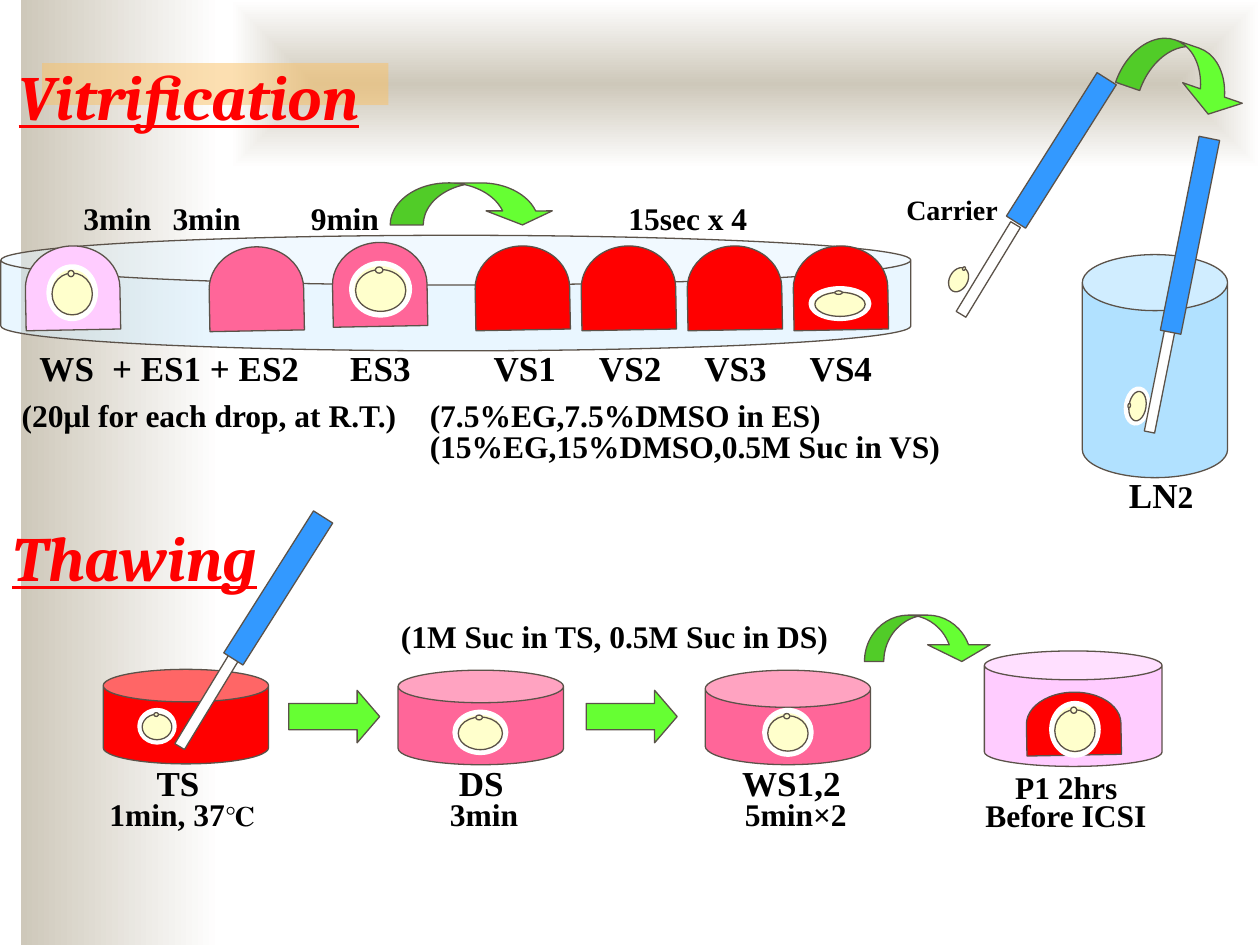
import math

from lxml import etree
from pptx import Presentation
from pptx.dml.color import RGBColor
from pptx.enum import shapes, text
from pptx.oxml import ns
from pptx.util import Pt

WHITE = RGBColor(0xFF, 0xFF, 0xFF)
BLACK = RGBColor(0, 0, 0)
RED = RGBColor(0xFF, 0, 0)
PINK = RGBColor(0xFF, 0x66, 0x99)
LILAC = RGBColor(0xFF, 0xCC, 0xFF)
CREAM = RGBColor(0xFF, 0xFF, 0xCC)
GREEN = RGBColor(0x66, 0xFF, 0x33)
BLUE = RGBColor(0x33, 0x99, 0xFF)
LIQUID = RGBColor(0xB1, 0xE1, 0xFF)
DISH = RGBColor(0xD5, 0xEF, 0xFF)
STONE = RGBColor(0xCE, 0xC8, 0xBA)
ORANGE = RGBColor(0xFA, 0xC1, 0x64)
OUTLINE = RGBColor(0x5B, 0x52, 0x49)

KIND = shapes.MSO_SHAPE
LEFT, CENTER = text.PP_ALIGN.LEFT, text.PP_ALIGN.CENTER
DROP_TILT = 268.9
VS_LEFT, VS_STEP = 274.5, 60.6


def add_figure(slide, kind, box, fill=None, line=OUTLINE, width=0.75, rotation=0, adjustments=()):
    shape = slide.shapes.add_shape(kind, *map(Pt, box))
    shape.shadow.inherit = False
    shape.rotation = rotation
    for index, value in enumerate(adjustments):
        shape.adjustments[index] = value
    if fill is not None:
        shape.fill.solid()
        shape.fill.fore_color.rgb = fill
    if line is None:
        shape.line.fill.background()
    else:
        shape.line.color.rgb = line
        shape.line.width = Pt(width)
    return shape


def make_half_transparent(shape):
    color = shape.element.spPr.find(ns.qn("a:solidFill"))[0]
    etree.SubElement(color, ns.qn("a:alpha"), val="50000")


def add_gradient_panel(slide, box, from_center=False):
    shape = add_figure(slide, KIND.RECTANGLE, box, line=None)
    shape.fill.gradient()
    shape.fill.gradient_angle = 0
    for stop, color in zip(shape.fill.gradient_stops, (STONE, WHITE)):
        stop.color.rgb = color
    if from_center:
        gradient = shape.element.spPr.find(ns.qn("a:gradFill"))
        linear = gradient.find(ns.qn("a:lin"))
        radial = etree.Element(ns.qn("a:path"), {"path": "shape"})
        etree.SubElement(radial, ns.qn("a:fillToRect"),
                         {side: "50000" for side in "ltrb"})
        gradient.replace(linear, radial)


def add_drop(slide, left, top, fill, width=48):
    add_figure(slide, KIND.FLOWCHART_DELAY, (left, top, width, 54), fill, rotation=DROP_TILT)


def add_egg(slide, left, top, width, height, rotation=0):
    """Draw halo, cell and polar body, all turned about the halo's centre."""
    angle = math.radians(rotation)
    # centre offset and size, as fractions of the halo
    parts = [(0, 0, 1, 1, WHITE, 3),
             (0, 0.025, 0.87, 0.81, OUTLINE, 0.75),
             (-0.025, -0.37, 0.13, 0.12, OUTLINE, 0.75)]
    for x, y, part_width, part_height, line, line_width in parts:
        x, y = x * width, y * height
        center_x = left + width / 2 + x * math.cos(angle) - y * math.sin(angle)
        center_y = top + height / 2 + x * math.sin(angle) + y * math.cos(angle)
        w, h = part_width * width, part_height * height
        add_figure(slide, KIND.OVAL, (center_x - w / 2, center_y - h / 2, w, h),
                   CREAM, line, line_width, rotation)


def add_can(slide, box, fill, rim):
    return add_figure(slide, KIND.CAN, box, fill, adjustments=[rim])


def add_carrier(slide, blade, handle, blade_tilt, handle_tilt):
    add_figure(slide, KIND.RECTANGLE, blade, WHITE, rotation=blade_tilt)
    add_figure(slide, KIND.RECTANGLE, handle, BLUE, rotation=handle_tilt)


def add_curved_arrow(slide, box, adjustments, rotation=0):
    add_figure(slide, KIND.CURVED_DOWN_ARROW, box, GREEN,
               rotation=rotation, adjustments=adjustments)


def format_run(run, size, font="Times New Roman", color=BLACK):
    run.font.name = font
    run.font.size = Pt(size)
    run.font.bold = True
    run.font.color.rgb = color


def add_label(slide, words, left, top, width, size=18, align=LEFT, suffix="", suffix_size=16):
    box = slide.shapes.add_textbox(Pt(left), Pt(top), Pt(width), Pt(size * 1.2 + 7.2))
    box.text_frame.word_wrap = True
    paragraph = box.text_frame.paragraphs[0]
    paragraph.text = words
    paragraph.alignment = align
    format_run(paragraph.runs[0], size)
    if suffix:
        run = paragraph.add_run()
        run.text = suffix
        format_run(run, suffix_size)
    return box


def format_heading(shape, words):
    frame = shape.text_frame
    frame.text = words
    frame.word_wrap = True
    frame.auto_size = text.MSO_AUTO_SIZE.NONE
    frame.vertical_anchor = text.MSO_ANCHOR.TOP
    paragraph = frame.paragraphs[0]
    paragraph.alignment = LEFT
    run = paragraph.runs[0]
    format_run(run, 36, "Cambria", RED)
    run.font.italic = True
    run.font.underline = True


def add_background(slide):
    add_gradient_panel(slide, (12, 0, 114, 540))
    add_gradient_panel(slide, (132, 0, 588, 96), from_center=True)
    make_half_transparent(add_figure(slide, KIND.RECTANGLE, (24, 36, 198, 24), ORANGE, None))


def add_title(slide):
    title = slide.shapes.title
    title.left, title.top, title.width, title.height = map(Pt, (3.5, 29, 244, 51))
    format_heading(title, "Vitrification")
    slide.shapes.element.append(title.element)  # in front of the background


def add_vitrification(slide):
    make_half_transparent(add_can(slide, (0.5, 134.5, 520, 66), DISH, 0.43))
    add_drop(slide, 17.5, 137.5, LILAC)
    add_drop(slide, 122.5, 138, PINK)
    add_drop(slide, 193, 135.5, PINK)
    for index in range(4):
        add_drop(slide, VS_LEFT + index * VS_STEP, 137.5, RED)
        add_label(slide, f"VS{index + 1}", 275 + index * 60.2, 194.5, 60, 20)
    for egg in [(28, 152.5, 26.5, 29.5), (201, 150.5, 33, 29.5), (463.5, 165, 33, 17)]:
        add_egg(slide, *egg)
    add_curved_arrow(slide, (223, 104.5, 94.5, 24), (0.787, 1.575, 0.333))

    add_carrier(slide, (561.5, 124, 6.5, 60), (600, 37.5, 13, 97), 31.3, 32.3)
    add_egg(slide, 542, 150.5, 12, 18, 28)
    add_can(slide, (618.5, 145.5, 83, 127.5), LIQUID, 0.386)
    add_egg(slide, 640, 226, 19.5, 12, 278.8)
    add_carrier(slide, (660, 185, 6, 62.5), (674, 78, 12, 113), 11.3, 11.3)
    add_curved_arrow(slide, (641, 26, 74, 34), (0.428, 1.06, 0.36), 19)

    for words, left, width in [("3min", 40.5, 57), ("3min", 91.5, 57),
                               ("9min", 170.5, 73), ("15sec x 4", 352, 102)]:
        add_label(slide, words, left, 110, width)
    for words, left, width in [("WS", 15.5, 50), ("+ ES1 + ES2", 57, 136), ("ES3", 193, 54)]:
        add_label(slide, words, left, 194.5, width, 20)
    add_label(slide, "Carrier", 499, 106.5, 90, 16, CENTER)
    add_label(slide, "(20μl for each drop, at R.T.)", -5, 223, 249, align=CENTER)
    add_label(slide, "(7.5%EG,7.5%DMSO in ES)", 238.5, 223, 284)
    add_label(slide, "(15%EG,15%DMSO,0.5M Suc in VS)", 238.5, 240.5, 312)
    add_label(slide, "LN", 638, 267, 51, 20, CENTER, "2", 18)


def add_thawing(slide):
    format_heading(slide.shapes.add_textbox(Pt(0), Pt(292.5), Pt(163.5), Pt(51)), "Thawing")
    add_can(slide, (59, 382.5, 94.5, 54), RED, 0.344)
    add_can(slide, (227.5, 383, 94.5, 54), PINK, 0.344)
    add_can(slide, (403, 383, 94.5, 54), PINK, 0.393)
    add_can(slide, (562.5, 372, 101.5, 66), LILAC, 0.25)
    add_drop(slide, 595.5, 386.5, RED, 36)
    add_carrier(slide, (115, 371, 6.5, 60), (152.5, 288, 13, 96), 31.3, 32.3)
    for egg in [(80, 406, 19.5, 18), (260, 407, 29, 23),
                (437, 406, 26.5, 25), (601, 402, 26.5, 29.5)]:
        add_egg(slide, *egg)
    for left in (165, 335):
        add_figure(slide, KIND.RIGHT_ARROW, (left, 394.5, 52, 30), GREEN,
                   adjustments=(0.5, 0.43))
    add_curved_arrow(slide, (494, 351.5, 73.5, 26.5), (0.417, 1.349, 0.36))

    for words, left, width in [("TS", 51, 101.5), ("DS", 224, 102), ("WS1,2", 374.5, 155.5)]:
        add_label(slide, words, left, 431.5, width, 20, CENTER)
    add_label(slide, "1min, 37", 55.5, 450.5, 194, suffix="℃")
    add_label(slide, "3min", 250, 450.5, 59)
    add_label(slide, "5min×2", 414, 450.5, 81.5, align=CENTER)
    add_label(slide, "P1 2hrs", 573, 435.5, 114)
    add_label(slide, "Before ICSI", 556, 451.5, 114)
    add_label(slide, "(1M Suc in TS, 0.5M Suc in DS)", 222, 349, 312)


def main():
    presentation = Presentation()
    presentation.slide_width, presentation.slide_height = Pt(720), Pt(540)
    slide = presentation.slides.add_slide(presentation.slide_layouts.get_by_name("Title Only"))
    add_background(slide)
    add_title(slide)
    add_vitrification(slide)
    add_thawing(slide)
    presentation.save("out.pptx")


if __name__ == "__main__":
    main()
